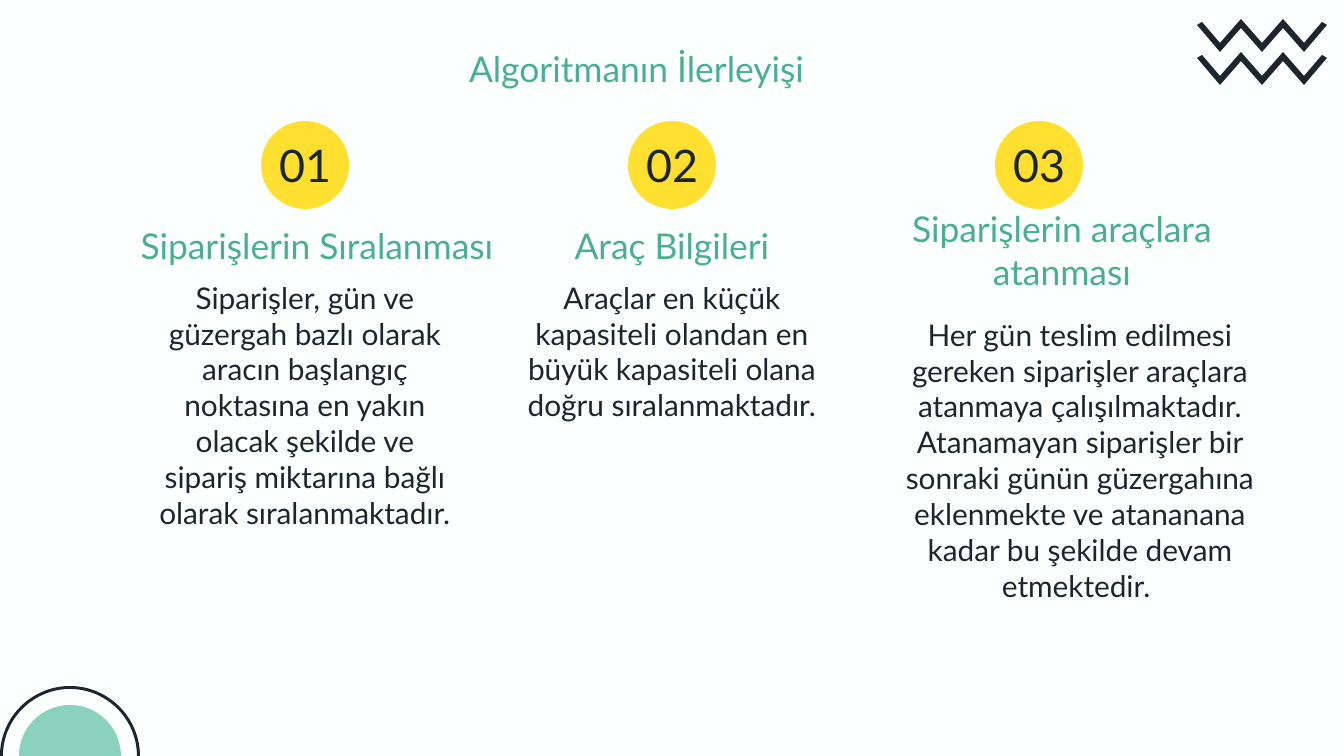
import pptx
import pptx.util
from pptx.dml.color import RGBColor
from pptx.enum.shapes import MSO_SHAPE
from pptx.enum.text import MSO_ANCHOR, PP_ALIGN
from pptx.oxml.xmlchemy import OxmlElement

PX = 914400 / 134.4
WIDE, HIGH = 1344, 756

THEME = {
    "font": "Lato",
    "back": "FBFFFE", "ink": "1D262D", "green": "4AAF91",
    "mint": "8BD2BD", "gold": "FFE031",
    "head": 19, "body": 16, "num": 24,
}

TITLE = ("Algoritmanın İlerleyişi", (45, 34, 1183, 99))

# number, heading, heading box, text, text box
STEPS = [
    ("01", "Siparişlerin Sıralanması", (104, 216, 426, 64),
     "Siparişler, gün ve güzergah bazlı olarak aracın başlangıç noktasına en "
     "yakın olacak şekilde ve sipariş miktarına bağlı olarak sıralanmaktadır.",
     (139, 266, 332, 106)),
    ("02", "Araç Bilgileri", (506, 216, 332, 64),
     "Araçlar en küçük kapasiteli olandan en büyük kapasiteli olana doğru "
     "sıralanmaktadır.",
     (506, 266, 332, 106)),
    ("03", "Siparişlerin araçlara atanması", (896, 242, 332, 64),
     "Her gün teslim edilmesi gereken siparişler araçlara atanmaya "
     "çalışılmaktadır. Atanamayan siparişler bir sonraki günün güzergahına "
     "eklenmekte ve atananana kadar bu şekilde devam etmektedir. ",
     (888, 303, 384, 106)),
]
FIRST, STEP = 305, 367          # badge centres
BADGE, BADGE_TOP = 88, 121
NUM_WIDE, NUM_HIGH = 183, 42

# Left half of a zigzag band, from the middle of its top edge round to the bottom
ZIGZAG = [(0, 24), (-21, 0), (-42, 24), (-60, 3),
          (-65, 6), (-42, 33), (-21, 9), (0, 33)]
ZIG_X, ZIG_TOPS = 1262, (52, 19)
DOME_X, RING, RIM, DOME = 70, 70, 67, 51
BEND = 0.55                     # handle length of a quarter circle


def emu(*px):
    return [round(n * PX) for n in px]


def color(name):
    return RGBColor.from_string(THEME[name])


def paint(shape, name):
    shape.shadow.inherit = False
    shape.fill.solid()
    shape.fill.fore_color.rgb = color(name)
    shape.line.fill.background()


def outline(shapes, points, name):
    dots = [emu(*point) for point in points]
    pen = shapes.build_freeform(*dots[0])
    pen.add_line_segments(dots[1:], close=True)
    shape = pen.convert_to_shape()
    paint(shape, name)
    return shape


def arc(radius):
    """Start, handles and ends of two curves over the slide's bottom edge."""
    bend = BEND * radius
    left = [(-radius, 0), (-radius, bend), (-bend, radius)]
    right = [(-x, y) for x, y in left[::-1]]
    return [(DOME_X + x, HIGH - y) for x, y in left + [(0, radius)] + right]


def curve(shape, starts):
    """Turn the three lines from each start into one cubic curve."""
    lines = shape.element.xpath(".//a:lnTo")
    for start in starts:
        bend = OxmlElement("a:cubicBezTo")
        lines[start].addprevious(bend)
        for line in lines[start:start + 3]:
            bend.append(line[0])
            line.getparent().remove(line)


def write(shapes, text, box, size, tint, anchor=MSO_ANCHOR.TOP):
    frame = shapes.add_textbox(*emu(*box)).text_frame
    inset = pptx.util.Inches(0.1)
    form = {"word_wrap": True, "vertical_anchor": anchor,
            "margin_left": inset, "margin_right": inset,
            "margin_top": inset, "margin_bottom": inset}
    for key, value in form.items():
        setattr(frame, key, value)
    para = frame.paragraphs[0]
    para.alignment = PP_ALIGN.CENTER
    run = para.add_run()
    run.text = text
    style = {"name": THEME["font"], "size": pptx.util.Pt(THEME[size])}
    for key, value in style.items():
        setattr(run.font, key, value)
    run.font.color.rgb = color(tint)


def decorate(shapes):
    band = ZIGZAG + [(-x, y) for x, y in ZIGZAG[-2:0:-1]]
    for top in ZIG_TOPS:
        outline(shapes, [(ZIG_X + x, top + y) for x, y in band], "ink")
    ring = outline(shapes, arc(RING) + arc(RIM)[::-1], "ink")
    curve(ring, (0, 3, 7, 10))
    curve(outline(shapes, arc(DOME), "mint"), (0, 3))


def main():
    deck = pptx.Presentation()
    deck.slide_width, deck.slide_height = emu(WIDE, HIGH)
    slide = deck.slides.add_slide(deck.slide_layouts[6])
    slide.background.fill.solid()
    slide.background.fill.fore_color.rgb = color("back")
    shapes = slide.shapes

    decorate(shapes)
    for i, (num, head, head_box, text, text_box) in enumerate(STEPS):
        mid = FIRST + i * STEP
        badge = shapes.add_shape(
            MSO_SHAPE.OVAL, *emu(mid - BADGE / 2, BADGE_TOP, BADGE, BADGE))
        paint(badge, "gold")
        num_top = BADGE_TOP + (BADGE - NUM_HIGH) / 2
        num_box = (mid - NUM_WIDE // 2, num_top, NUM_WIDE, NUM_HIGH)
        write(shapes, num, num_box, "num", "ink", MSO_ANCHOR.MIDDLE)
        write(shapes, head, head_box, "head", "green", MSO_ANCHOR.BOTTOM)
        write(shapes, text, text_box, "body", "ink")
    write(shapes, *TITLE, "head", "green")
    deck.save("out.pptx")


if __name__ == "__main__":
    main()
